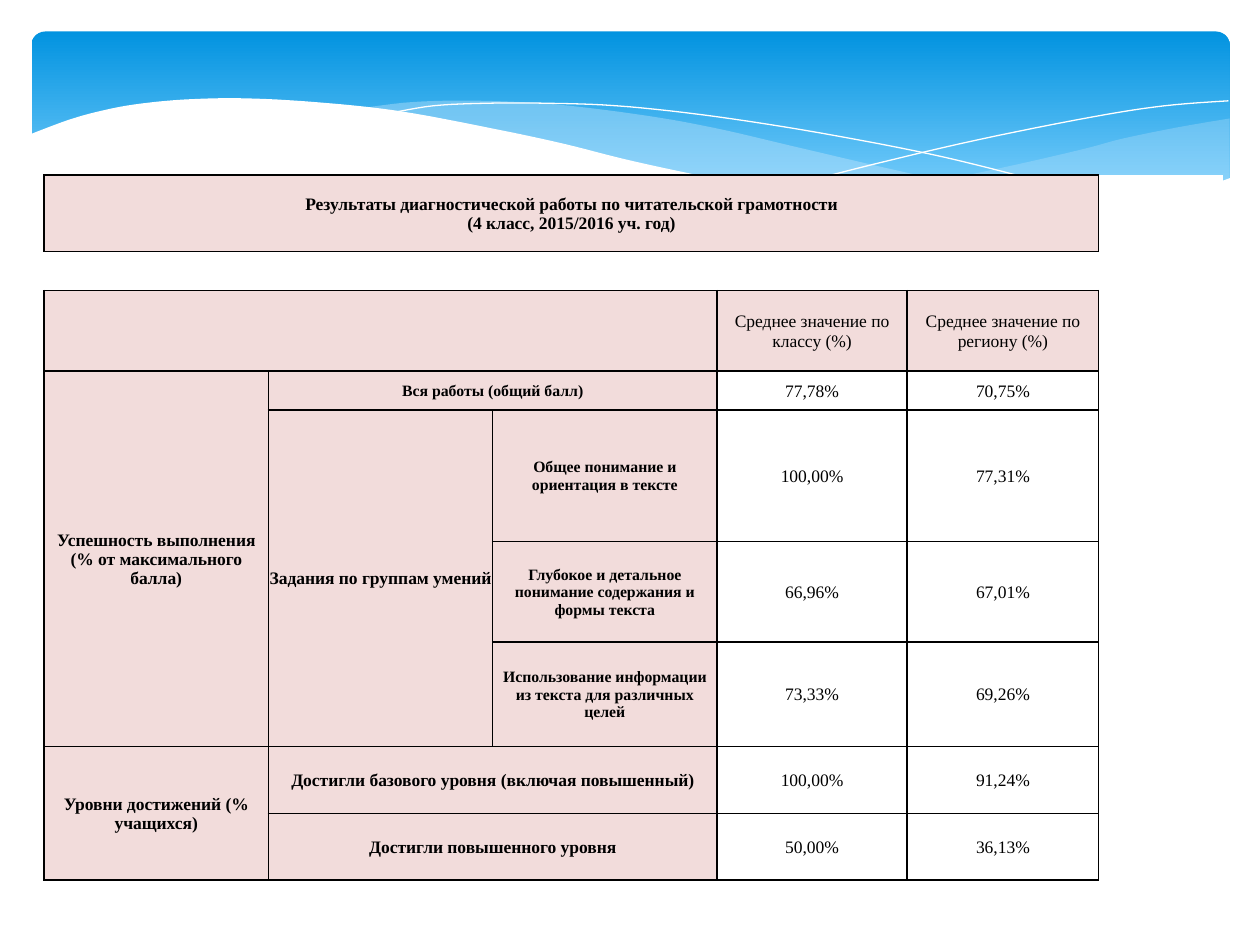
import pptx
import pptx.util
import pptx.dml.color
import pptx.enum.shapes
import pptx.enum.text
import pptx.oxml
import pptx.oxml.ns
import lxml.etree

qn = pptx.oxml.ns.qn
sub = lxml.etree.SubElement

deck = pptx.Presentation()
deck.slide_width = pptx.util.Inches(10)
deck.slide_height = pptx.util.Inches(7.5)
unit = deck.slide_width / 100
slide = deck.slides.add_slide(deck.slide_layouts[6])


def paint(fill, tone, alpha=100):
    fill.solid()
    fill.fore_color.rgb = pptx.dml.color.RGBColor.from_string(tone)
    if alpha < 100:
        node = fill._xPr.find(qn("a:solidFill"))[0]
        sub(node, qn("a:alpha"), val=str(alpha * 1000))


def curve(knots, steps=6):
    ends = [knots[0]] + knots + [knots[-1]]
    dots = [knots[0]]
    for a, b, c, d in zip(ends, ends[1:], ends[2:], ends[3:]):
        for i in range(1, steps + 1):
            t = i / steps
            dots.append(tuple(
                (2 * q + (r - p) * t + (2 * p - 5 * q + 4 * r - s) * t ** 2
                 + (3 * q - p - 3 * r + s) * t ** 3) / 2
                for p, q, r, s in zip(a, b, c, d)))
    return dots


band = slide.shapes.add_shape(
    pptx.enum.shapes.MSO_SHAPE.ROUNDED_RECTANGLE,
    *[round(v * unit) for v in (2.5, 2.5, 95.1, 15.6)])
band.adjustments[0] = 0.07
band.shadow.inherit = False
band.line.fill.background()
band.fill.gradient()
band.fill.gradient_angle = 270
for stop, tone, spot in zip(band.fill.gradient_stops, ("0293E0", "83D3FE"), (0, 0.9)):
    stop.color.rgb = pptx.dml.color.RGBColor.from_string(tone)
    stop.position = spot

right = curve([(97.6, 9.4), (93.5, 10.1), (89.1, 11), (86.1, 11.8), (80.5, 13.1),
               (72.9, 14.7), (66.1, 16)])
right += curve([(66.1, 16), (70.5, 16.5), (75.7, 17), (80.3, 17.2), (85.4, 17),
                (89.7, 16.5), (93.5, 15.6), (97.6, 14.1)])
middle = curve([(89.3, 16.7), (83.7, 15.9), (77.5, 14.9), (70.6, 13.4), (62.9, 11.6),
                (56.9, 10.2), (51.4, 9.2), (44.2, 8.3), (38, 8), (32.8, 8.1), (28.6, 8.6)])
middle += curve([(28.6, 8.6), (34.2, 9.4), (40.4, 10.6), (49.1, 12.6), (56.6, 14.3),
                 (63.4, 15.6), (69.5, 16.5), (74.8, 17), (80.7, 17.3), (84.8, 17.2),
                 (89.3, 16.7)])
fall = curve([(30.9, 9), (34.4, 8.4), (38.7, 8.2), (43.3, 8.2), (48.9, 8.4), (55.6, 9.1),
              (63.6, 10.3), (72.7, 12), (79.5, 13.6), (90.7, 16.6)])
rise = curve([(61.3, 15.1), (69.5, 13), (77.6, 11.1), (86.6, 9.3), (92.4, 8.4), (97.5, 8)])
front = curve([(97.7, 14.1), (93, 15.7), (87.5, 16.7), (80.9, 17.1), (74.4, 16.8),
               (66.8, 16), (57.9, 14.4), (50.3, 12.8), (44.7, 11.4), (39.1, 10.2),
               (31.6, 8.8), (25, 8.1), (19.3, 7.8), (14.6, 7.9), (10.6, 8.3), (7.6, 8.9),
               (5.2, 9.6), (2.3, 10.7)])
front += [(2.3, 22.4), (97.7, 22.4)]

for dots, tone, alpha, shut in (
        (right, "C6E7FC", 29, True), (middle, "C6E7FC", 40, True),
        (fall, "FFFFFF", 100, False), (rise, "FFFFFF", 100, False),
        (front, "FFFFFF", 100, True)):
    dots = [(round(x * unit), round(y * unit)) for x, y in dots]
    pen = slide.shapes.build_freeform(*dots[0])
    pen.add_line_segments(dots[1:], close=shut)
    wave = pen.convert_to_shape()
    wave.shadow.inherit = False
    if shut:
        paint(wave.fill, tone, alpha)
        wave.line.fill.background()
    else:
        wave.fill.background()
        paint(wave.line.fill, tone)
        wave.line.width = 0

cols = [17.8, 17.8, 17.8, 15.1, 15.2, 9.9]
rows = [2.9, 3.1, 3.1, 6.4, 3.1, 10.4, 8, 8.3, 5.3, 5.3]
texts = {
    (0, 0): "Результаты диагностической работы по читательской грамотности\v"
            "(4 класс, 2015/2016 уч. год)",
    (3, 3): "Среднее значение по классу (%)",
    (3, 4): "Среднее значение по региону (%)",
    (4, 0): "Успешность выполнения (% от максимального балла)",
    (4, 1): "Вся работы (общий балл)",
    (5, 1): "Задания по группам умений",
    (5, 2): "Общее понимание и ориентация в тексте",
    (6, 2): "Глубокое и детальное понимание содержания и формы текста",
    (7, 2): "Использование информации из текста для различных целей",
    (8, 0): "Уровни достижений (% учащихся)",
    (8, 1): "Достигли базового уровня (включая повышенный)",
    (9, 1): "Достигли повышенного уровня",
}
marks = [("77,78%", "70,75%"), ("100,00%", "77,31%"), ("66,96%", "67,01%"),
         ("73,33%", "69,26%"), ("100,00%", "91,24%"), ("50,00%", "36,13%")]
for r, pair in enumerate(marks, 4):
    texts[r, 3], texts[r, 4] = pair
small = {(4, 1), (5, 2), (6, 2), (7, 2)}

frame = slide.shapes.add_table(
    len(rows), len(cols),
    *[round(v * unit) for v in (3.5, 13.9, sum(cols), sum(rows))])
grid = frame.table
grid.first_row = grid.horz_banding = False
for col, wide in zip(grid.columns, cols):
    col.width = round(wide * unit)
for row, high in zip(grid.rows, rows):
    row.height = round(high * unit)
for top, left, down, over in ((0, 0, 1, 4), (3, 0, 3, 2), (4, 0, 7, 0), (4, 1, 4, 2),
                              (5, 1, 7, 1), (8, 0, 9, 0), (8, 1, 8, 2), (9, 1, 9, 2)):
    grid.cell(top, left).merge(grid.cell(down, over))

for r in range(len(rows)):
    for c in range(len(cols)):
        cell = grid.cell(r, c)
        cell.margin_left = cell.margin_right = cell.margin_top = round(0.1 * unit)
        cell.margin_bottom = 0
        cell.vertical_anchor = pptx.enum.text.MSO_ANCHOR.MIDDLE
        gap, edge = r == 2, c == 5
        shown = {"L": not gap, "R": not gap and not edge, "T": not edge, "B": not edge}
        for side, on in shown.items():
            line = sub(cell._tc.get_or_add_tcPr(), qn("a:ln" + side), w="12700")
            if on:
                sub(sub(line, qn("a:solidFill")), qn("a:srgbClr"), val="000000")
            else:
                sub(line, qn("a:noFill"))
        label = not gap and (r <= 3 and c < 5 or c < 3)
        paint(cell.fill, "F2DCDB" if label else "FFFFFF")
        para = cell.text_frame.paragraphs[0]
        if (r, c) not in texts:
            sub(para._p, qn("a:endParaRPr"), sz="1000")
            continue
        cell.text_frame.text = texts[r, c]
        para = cell.text_frame.paragraphs[0]
        para.alignment = pptx.enum.text.PP_ALIGN.CENTER
        for run in para.runs:
            run.font.name = "Times New Roman"
            run.font.size = pptx.util.Pt(9 if (r, c) in small else 10)
            run.font.bold = c < 3
            paint(run.font.fill, "000000")

deck.save("out.pptx")
